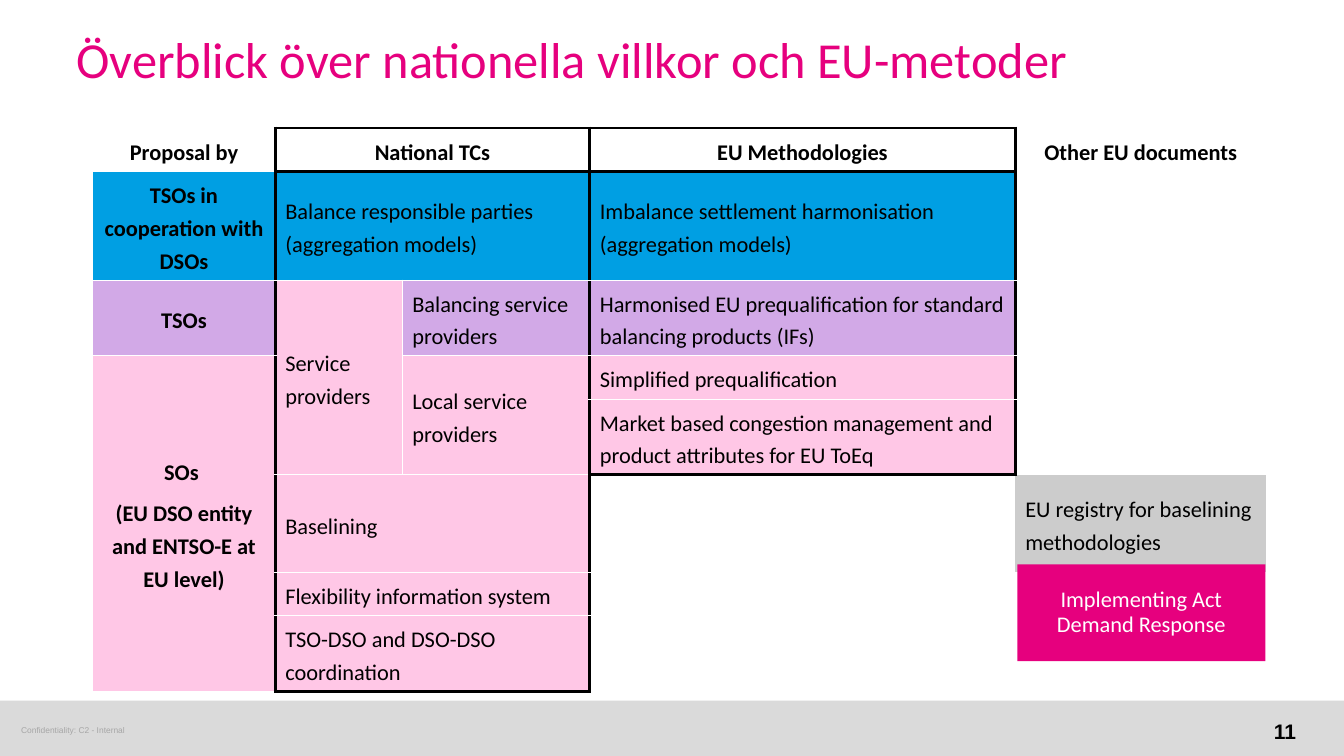
from dataclasses import dataclass

from lxml.etree import SubElement
from pptx import Presentation
from pptx.dml.color import RGBColor
from pptx.enum.shapes import MSO_SHAPE as Shape
from pptx.enum.text import MSO_ANCHOR as Anchor, PP_ALIGN as Align
from pptx.oxml.ns import qn
from pptx.util import Inches, Pt


@dataclass(frozen=True)
class Theme:
    magenta: str = "E6007E"
    blue: str = "009FE3"
    purple: str = "D2A9E7"
    pink: str = "FFC7E6"
    silver: str = "CCCCCC"
    band: str = "DADADA"
    muted: str = "737373"
    black: str = "000000"
    white: str = "FFFFFF"
    face: str = "Calibri"
    footer_face: str = "Arial"
    title_size: float = 36
    body_size: float = 16
    number_size: float = 15
    footer_size: float = 6
    thick: float = 2.25
    thin: float = 1


theme = Theme()


def write(frame, text, size, color, face=theme.face, bold=False,
          align=Align.LEFT, spacing=1.0, after=0):
    frame.word_wrap = True
    frame.text = text
    for para in frame.paragraphs:
        para.alignment = align
        para.line_spacing = spacing
        para.space_after = Pt(after)
        for span in para.runs:
            span.font.size = Pt(size)
            span.font.name = face
            span.font.bold = bold
            span.font.color.rgb = RGBColor.from_string(color)


def draw_edge(cell, side, color, width):
    line = SubElement(cell._tc.get_or_add_tcPr(), qn(f"a:ln{side}"), w=str(Pt(width)))
    if color:
        paint = SubElement(line, qn("a:solidFill"))
        SubElement(paint, qn("a:srgbClr"), val=color)
    else:
        SubElement(line, qn("a:noFill"))


deck = Presentation()
deck.slide_width, deck.slide_height = Inches(13.33), Inches(7.5)
page = deck.slides.add_slide(deck.slide_layouts[6])

# Filled blocks: the footer band first, the table and the magenta box above it
footer_band = page.shapes.add_shape(
    Shape.RECTANGLE, Inches(0), Inches(6.95), Inches(13.33), Inches(0.55))

# Plain text: footer, title, page number
labels = [
    (0.21, 7.19, 1.06, 0.1, "Confidentiality: C2 - Internal",
     dict(size=theme.footer_size, color=theme.muted, face=theme.footer_face)),
    (0.76, 0.37, 11.23, 1.07, "Överblick över nationella villkor och EU-metoder",
     dict(size=theme.title_size, color=theme.magenta, spacing=0.85)),
    (12.55, 7.13, 0.39, 0.2, "11",
     dict(size=theme.number_size, color=theme.black, face=theme.footer_face,
          bold=True, align=Align.CENTER)),
]
for left, top, width, height, text, style in labels:
    box = page.shapes.add_textbox(
        Inches(left), Inches(top), Inches(width), Inches(height))
    frame = box.text_frame
    frame.margin_left = frame.margin_right = frame.margin_top = frame.margin_bottom = 0
    write(frame, text, **style)
    if style["color"] == theme.muted:
        tint = frame.paragraphs[0].runs[0]._r.find(".//" + qn("a:srgbClr"))
        SubElement(tint, qn("a:alpha"), val="50000")

# Table grid
column_widths = [1.81, 1.26, 1.86, 4.22, 2.49]
row_heights = [0.43, 1.08, 0.75, 0.43, 0.75, 0.97, 0.43, 0.75]
holder = page.shapes.add_table(
    len(row_heights), len(column_widths), Inches(0.92), Inches(1.27),
    Inches(sum(column_widths)), Inches(sum(row_heights)))
table = holder.table
table.first_row = table.horz_banding = False
style_id = table._tbl.tblPr.find(qn("a:tableStyleId"))
style_id.text = "{2D5ABB26-0587-4C30-8999-92F81FD0307C}"
for column, width in zip(table.columns, column_widths):
    column.width = Inches(width)
for row, height in zip(table.rows, row_heights):
    row.height = Inches(height)

# Row, column, rows spanned, columns spanned, text, fill, black edges
entries = [
    (0, 0, 1, 1, "Proposal by", None, "R"),
    (0, 1, 1, 2, "National TCs", None, "LRTB"),
    (0, 3, 1, 1, "EU Methodologies", None, "LRTB"),
    (0, 4, 1, 1, "Other EU documents", None, "L"),
    (1, 0, 1, 1, "TSOs in cooperation with DSOs", theme.blue, "R"),
    (1, 1, 1, 2, "Balance responsible parties (aggregation models)", theme.blue, "LRT"),
    (1, 3, 1, 1, "Imbalance settlement harmonisation (aggregation models)",
     theme.blue, "LRT"),
    (2, 0, 1, 1, "TSOs", theme.purple, "R"),
    (2, 1, 3, 1, "Service providers", theme.pink, "L"),
    (2, 2, 1, 1, "Balancing service providers", theme.purple, "R"),
    (2, 3, 1, 1, "Harmonised EU prequalification for standard balancing products (IFs)",
     theme.purple, "LR"),
    (3, 0, 5, 1, "SOs \n(EU DSO entity and ENTSO-E at EU level)", theme.pink, "R"),
    (3, 2, 2, 1, "Local service providers", theme.pink, "R"),
    (3, 3, 1, 1, "Simplified prequalification", theme.pink, "LR"),
    (4, 3, 1, 1, "Market based congestion management and product attributes for EU ToEq",
     theme.pink, "LRB"),
    (5, 1, 1, 2, "Baselining", theme.pink, "LR"),
    (5, 3, 1, 1, "", None, "LT"),
    (5, 4, 1, 1, "EU registry for baselining methodologies", theme.silver, ""),
    (6, 1, 1, 2, "Flexibility information system", theme.pink, "LR"),
    (6, 3, 2, 2, "", None, "L"),
    (7, 1, 1, 2, "TSO-DSO and DSO-DSO coordination", theme.pink, "LRB"),
]
entries += [(row, 4, 1, 1, "", None, "L") for row in range(1, 5)]

for top, left, tall, wide, text, fill, black_edges in entries:
    bottom, right = top + tall - 1, left + wide - 1
    cell = table.cell(top, left)
    if tall * wide > 1:
        cell.merge(table.cell(bottom, right))
    heading = top == 0 or left == 0
    if text:
        write(cell.text_frame, text, theme.body_size, theme.black, bold=heading,
              align=Align.CENTER if heading else Align.LEFT, spacing=1.2, after=6)
    cell.vertical_anchor = Anchor.MIDDLE

    # Outer edges of the span, then the fill of each covered cell
    plain_edge = theme.white if fill and fill != theme.silver else None
    for row in range(top, bottom + 1):
        for column in range(left, right + 1):
            part = table.cell(row, column)
            outer = {"L": column == left, "R": column == right,
                     "T": row == top, "B": row == bottom}
            for side, is_outer in outer.items():
                if is_outer and side in black_edges:
                    draw_edge(part, side, theme.black, theme.thick)
                elif is_outer:
                    draw_edge(part, side, plain_edge, theme.thin)
            if fill:
                part.fill.solid()
                part.fill.fore_color.rgb = RGBColor.from_string(fill)
            else:
                part.fill.background()

# Implementing act box
act_box = page.shapes.add_shape(
    Shape.RECTANGLE, Inches(10.09), Inches(5.6), Inches(2.46), Inches(0.96))
write(act_box.text_frame, "Implementing Act Demand Response", theme.body_size,
      theme.white, align=Align.CENTER, spacing=0.9)
act_box.text_frame.vertical_anchor = Anchor.MIDDLE

for block, color in ((footer_band, theme.band), (act_box, theme.magenta)):
    block.shadow.inherit = False
    block.fill.solid()
    block.fill.fore_color.rgb = RGBColor.from_string(color)
    block.line.fill.background()

deck.save("out.pptx")
